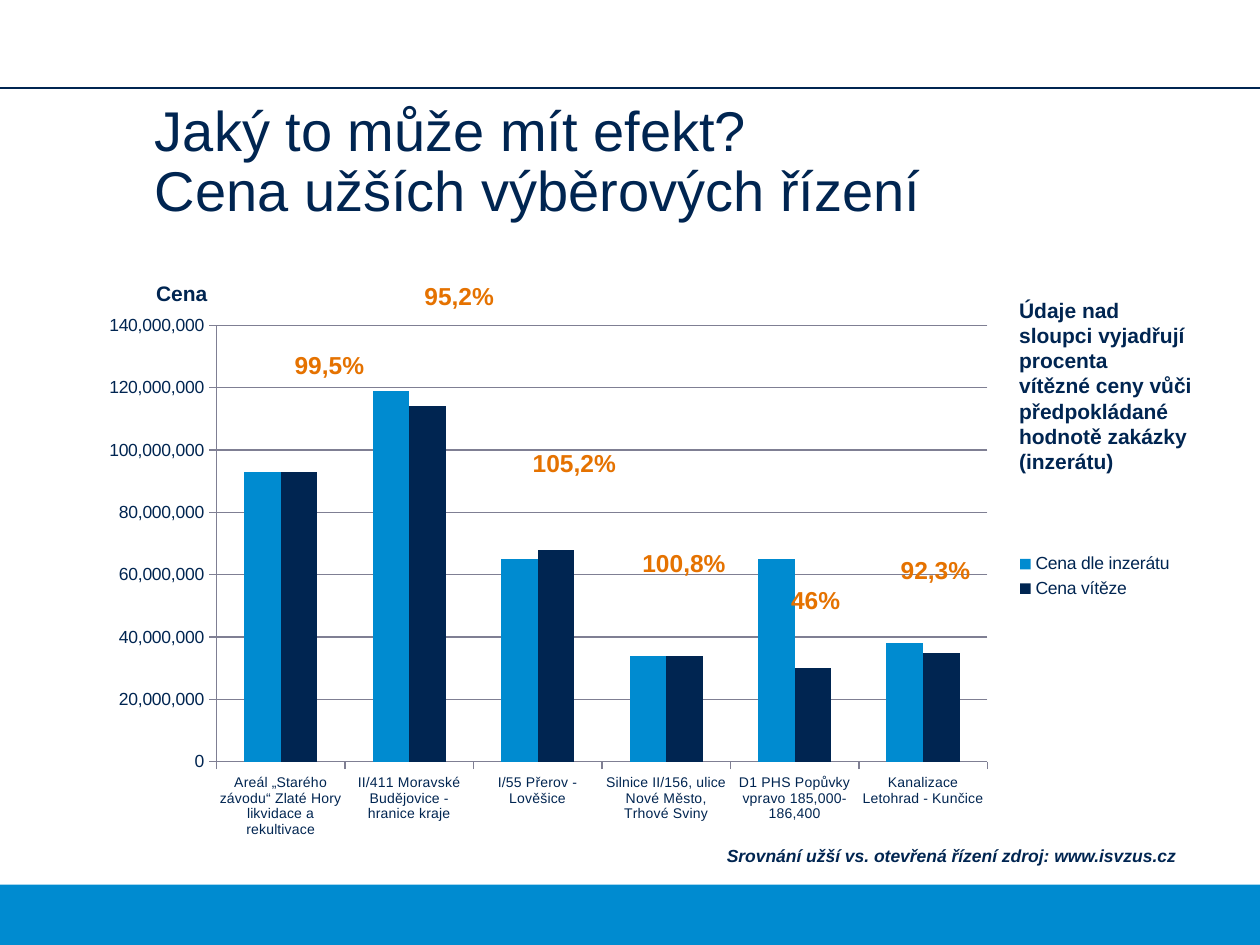
from lxml.etree import SubElement, fromstring
from pptx import Presentation
from pptx.chart.data import CategoryChartData
from pptx.dml.color import RGBColor
from pptx.enum.chart import XL_CHART_TYPE as ChartType, XL_LEGEND_POSITION as LegendPos, XL_TICK_MARK as Tick
from pptx.enum.shapes import MSO_CONNECTOR as Connector, MSO_SHAPE as Shape
from pptx.enum.text import MSO_ANCHOR as Anchor
from pptx.oxml.ns import qn
from pptx.util import Inches, Pt

# Content
COLORS = {"navy": "002551", "blue": "008BD0", "orange": "E57200", "grid": "7F7F93"}
FONT = "Arial"
WIDTH, HEIGHT = 10, 7.5

TITLE = ["Jaký to může mít efekt?", "Cena užších výběrových řízení"]
PROJECTS = [
    "Areál „Starého závodu“ Zlaté Hory likvidace a rekultivace",
    "II/411 Moravské Budějovice - hranice kraje",
    "I/55 Přerov - Lověšice",
    "Silnice II/156, ulice Nové Město, Trhové Sviny",
    "D1 PHS Popůvky vpravo 185,000-186,400",
    "Kanalizace Letohrad - Kunčice",
]
MILLION = 1_000_000
PRICES = [  # name, colour, values in millions
    ("Cena dle inzerátu", "blue", [93, 119, 65, 34, 65, 38]),
    ("Cena vítěze", "navy", [93, 114, 68, 34, 30, 35]),
]
RATIOS = [  # winning price against the estimate: text, left, top
    ("99,5%", 2.24, 2.73), ("95,2%", 3.27, 2.18), ("105,2%", 4.13, 3.51),
    ("100,8%", 5, 4.3), ("46%", 6.18, 4.59), ("92,3%", 7.05, 4.36),
]
AXIS_NAME = ["Cena"]
NOTE = ["Údaje nad sloupci vyjadřují procenta",
        "vítězné ceny vůči předpokládané hodnotě zakázky (inzerátu)"]
SOURCE = ["Srovnání užší vs. otevřená řízení zdroj: www.isvzus.cz"]
PLOT_AREA = {"x": 0.12, "y": 0.04, "w": 0.7, "h": 0.8}  # shares of the chart


def rgb(name):
    return RGBColor.from_string(COLORS[name])


def style(font, size, color="navy", bold=False, italic=False):
    font.name, font.size, font.bold, font.italic = FONT, Pt(size), bold, italic
    font.color.rgb = rgb(color)


def add_text(lines, box, size, color="navy", bold=True, italic=False):
    frame = slide.shapes.add_textbox(*map(Inches, box)).text_frame
    frame.word_wrap = True
    paragraph = frame.paragraphs[0]
    for number, line in enumerate(lines):
        if number:
            paragraph.add_line_break()
        run = paragraph.add_run()
        run.text = line
        style(run.font, size, color, bold, italic)
    return frame


deck = Presentation()
deck.slide_width, deck.slide_height = Inches(WIDTH), Inches(HEIGHT)
slide = deck.slides.add_slide(deck.slide_layouts[6])

# Footer band and header rule
band_top = 7.02
band = slide.shapes.add_shape(Shape.RECTANGLE, 0, Inches(band_top), Inches(WIDTH), Inches(HEIGHT - band_top))
band.shadow.inherit = False
band.fill.solid()
band.fill.fore_color.rgb = rgb("blue")
band.line.fill.background()

rule = slide.shapes.add_connector(Connector.STRAIGHT, 0, Inches(0.7), Inches(WIDTH), Inches(0.7))
rule.line.color.rgb = rgb("navy")
rule.line.width = Pt(1)
SubElement(rule._element.spPr, qn("a:effectLst"))

# Price chart
data = CategoryChartData(number_format="#,##0")
data.categories = PROJECTS
for name, _, millions in PRICES:
    data.add_series(name, [value * MILLION for value in millions])
chart = slide.shapes.add_chart(
    ChartType.COLUMN_CLUSTERED, *map(Inches, (0.67, 2.41, 8.74, 4.33)), data).chart
style(chart.font, 10)
chart.has_title = False
chart.has_legend = True
chart.legend.position = LegendPos.RIGHT
chart.legend.include_in_layout = False
style(chart.legend.font, 10)

bars = chart.plots[0]
bars.gap_width, bars.overlap, bars.vary_by_categories = 150, 0, False
for series, (_, color, _) in zip(bars.series, PRICES):
    series.format.fill.solid()
    series.format.fill.fore_color.rgb = rgb(color)

price_axis, project_axis = chart.value_axis, chart.category_axis
price_axis.minimum_scale, price_axis.maximum_scale = 0, 140 * MILLION
price_axis.major_unit = 20 * MILLION
price_axis.tick_labels.number_format = "#,##0"
price_axis.tick_labels.number_format_is_linked = False
price_axis.has_major_gridlines = True
for axis, size in ((price_axis, 10), (project_axis, 8)):
    axis.major_tick_mark = Tick.OUTSIDE
    axis.minor_tick_mark = Tick.NONE
    style(axis.tick_labels.font, size)
for line in (price_axis.format.line, project_axis.format.line, price_axis.major_gridlines.format.line):
    line.color.rgb = rgb("grid")
    line.width = Pt(0.75)

# Fixed inner plot area
plot_area = chart._chartSpace.chart.plotArea
for old in plot_area.findall(qn("c:layout")):
    plot_area.remove(old)
modes = '<c:layoutTarget val="inner"/><c:xMode val="edge"/><c:yMode val="edge"/>'
shares = "".join(f'<c:{key} val="{share}"/>' for key, share in PLOT_AREA.items())
plot_area.insert(0, fromstring(
    '<c:layout xmlns:c="http://schemas.openxmlformats.org/drawingml/2006/chart">'
    f"<c:manualLayout>{modes}{shares}</c:manualLayout></c:layout>"))

# Title
title = add_text(TITLE, (1.18, 0.76, 8.44, 1.07), 32, bold=False)
title.margin_left = title.margin_right = title.margin_top = title.margin_bottom = Inches(0.05)
title.vertical_anchor = Anchor.MIDDLE
title.paragraphs[0].line_spacing = 0.9

# Labels and notes
for ratio, left, top in RATIOS:
    add_text([ratio], (left, top, 0.94, 0.34), 14, "orange")
add_text(AXIS_NAME, (1.14, 2.18, 0.94, 0.3), 12)
add_text(NOTE, (7.99, 2.31, 1.57, 1.51), 12)
add_text(SOURCE, (5.67, 6.66, 4.33, 0.27), 10, italic=True)

deck.save("out.pptx")
